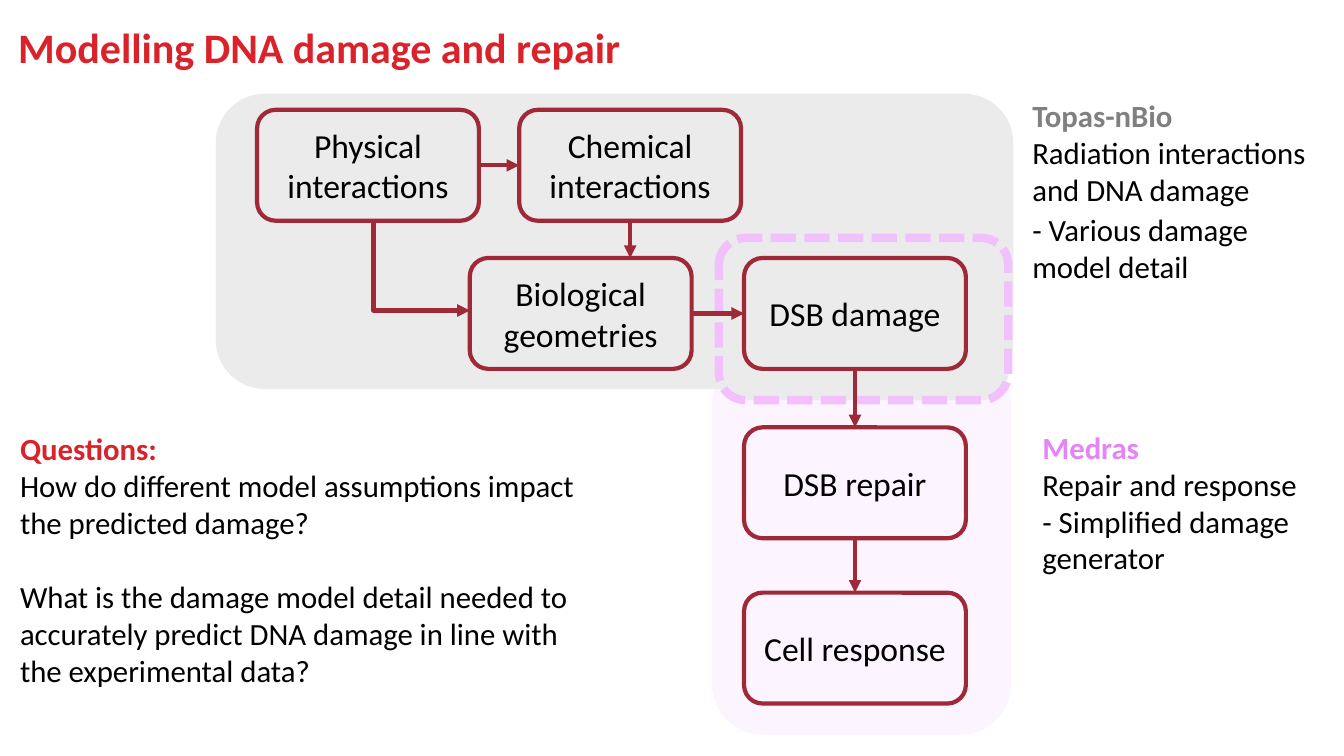
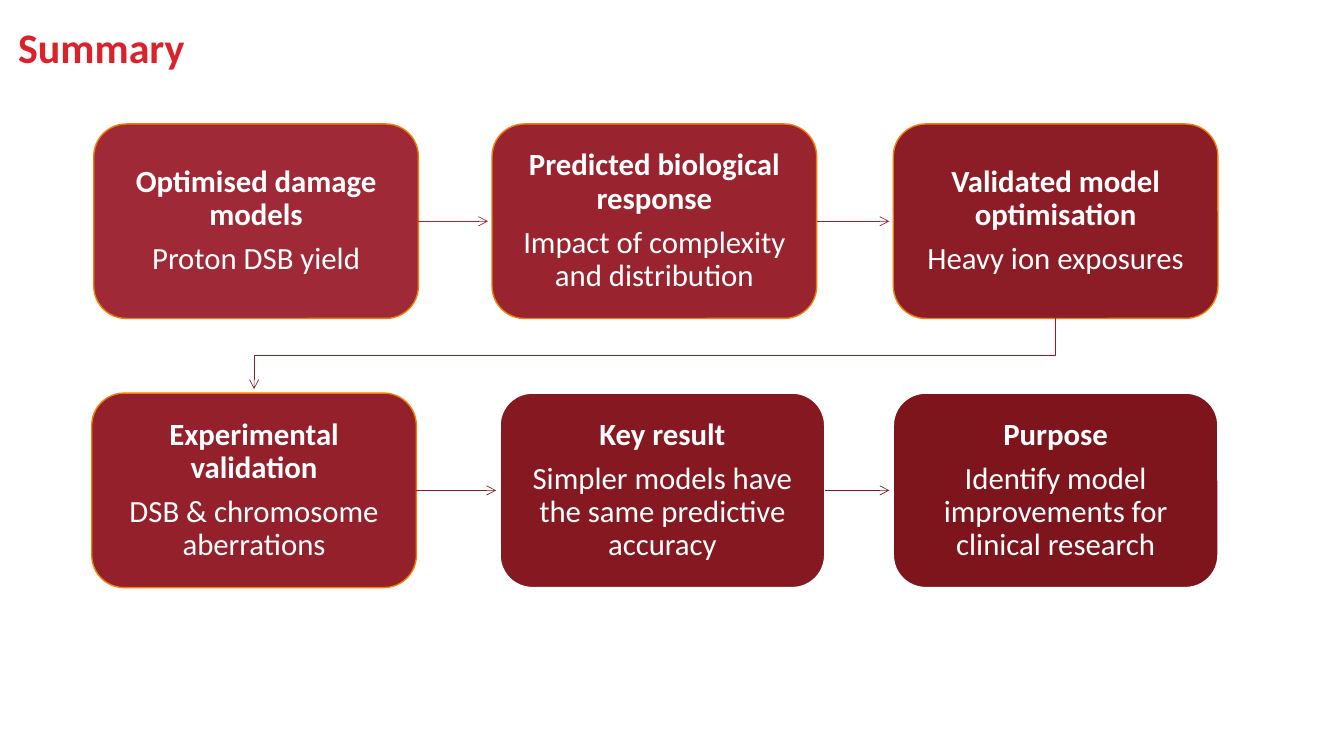
from pptx import Presentation
from pptx.dml.color import RGBColor
from pptx.enum.dml import MSO_LINE
from pptx.enum.shapes import MSO_CONNECTOR, MSO_SHAPE
from pptx.enum.text import MSO_ANCHOR, MSO_AUTO_SIZE, PP_ALIGN
from pptx.oxml.ns import qn
from pptx.util import Inches, Pt
from lxml import etree

STRAIGHT, ELBOW = MSO_CONNECTOR.STRAIGHT, MSO_CONNECTOR.ELBOW
ROUND_RECT = MSO_SHAPE.ROUNDED_RECTANGLE
SYS_DASH = MSO_LINE.SQUARE_DOT
TOP_ANCHOR, MIDDLE = MSO_ANCHOR.TOP, MSO_ANCHOR.MIDDLE
NO_AUTOFIT = MSO_AUTO_SIZE.NONE
LEFT_ALIGN, CENTER = PP_ALIGN.LEFT, PP_ALIGN.CENTER
TOP, LEFT, BOTTOM, RIGHT = range(4)  # connection sites of a rectangle

FONT = "Calibri"
RED = RGBColor(0xD9, 0x22, 0x2A)
MAROON = RGBColor(0x9F, 0x29, 0x36)
ORANGE = RGBColor(0xF0, 0x7F, 0x09)
WHITE = RGBColor(0xFF, 0xFF, 0xFF)
BLACK = RGBColor(0, 0, 0)
GREY = RGBColor(0x80, 0x80, 0x80)
PALE_GREY = RGBColor(0xEB, 0xEB, 0xEB)
PINK = RGBColor(0xE5, 0x83, 0xF9)
LIGHT_PINK = RGBColor(0xF2, 0xC0, 0xFC)
PALE_PINK = RGBColor(0xFC, 0xF4, 0xFE)

# Slide 1: (left, top, width, height), fill, line, line width, dash
PANELS = [
    ((7.07, 3.5, 2.95, 3.78), PALE_PINK, PALE_PINK, 1, None),
    ((2.14, 0.93, 7.91, 2.93), PALE_GREY, None, 0, None),
    ((7.13, 2.36, 2.87, 1.61), PALE_GREY, LIGHT_PINK, 6, SYS_DASH),
]
STEP_SIZE = (2.2, 1.1)
STEPS = {
    "Physical interactions": (2.55, 1.09),
    "Chemical interactions": (5.15, 1.09),
    "Biological geometries": (4.66, 2.56),
    "DSB damage": (7.38, 2.56),
    "DSB repair": (7.38, 4.24),
    "Cell response": (7.38, 5.88),
}
STEP_LINKS = [
    ("Physical interactions", RIGHT, "Chemical interactions", LEFT),
    ("Biological geometries", RIGHT, "DSB damage", LEFT),
    ("DSB damage", BOTTOM, "DSB repair", TOP),
    ("DSB repair", BOTTOM, "Cell response", TOP),
]
# (left, top, width, height), heading, colour, [(text, points before)]
NOTES = [
    ((10.14, 0.91, 3.19, 1.97), "Topas-nBio", GREY,
     [("Radiation interactions and DNA damage", 0),
      ("- Various damage model detail", 2)]),
    ((10.24, 4.2, 2.99, 1.59), "Medras", PINK,
     [("Repair and response", 0), ("- Simplified damage generator", 0)]),
    ((0.1, 4.21, 5.92, 2.69), "Questions:", RED,
     [("How do different model assumptions impact the predicted damage?", 0),
      ("What is the damage model detail needed to accurately predict DNA "
       "damage in line with the experimental data?", 26.8)]),
]

# Slide 2: left, top, fill, line, heading, text; in reading order
CARD_SIZE = (3.22, 1.93)
CARDS = [
    (0.93, 1.23, MAROON, ORANGE, "Optimised damage models",
     "Proton DSB yield"),
    (4.88, 1.23, RGBColor(0x99, 0x24, 0x30), ORANGE,
     "Predicted biological response", "Impact of complexity and distribution"),
    (8.86, 1.23, RGBColor(0x8C, 0x1C, 0x26), ORANGE,
     "Validated model optimisation", "Heavy ion exposures"),
    (0.91, 3.9, RGBColor(0x93, 0x20, 0x2B), ORANGE,
     "Experimental validation", "DSB & chromosome aberrations"),
    (4.96, 3.9, RGBColor(0x86, 0x18, 0x21), WHITE,
     "Key result", "Simpler models have the same predictive accuracy"),
    (8.86, 3.9, RGBColor(0x7E, 0x15, 0x1D), WHITE,
     "Purpose", "Identify model improvements for clinical research"),
]
CARD_LINK_COLOURS = [MAROON, RGBColor(0x98, 0x23, 0x2F),
                     RGBColor(0x90, 0x1E, 0x29), RGBColor(0x87, 0x19, 0x23),
                     RGBColor(0x7E, 0x15, 0x1D)]
ARROW_GAP = Inches(0.04)


def add_titled_slide(prs, title):
    s = prs.slides.add_slide(prs.slide_layouts[5])
    sp = s.shapes.title
    sp.left, sp.top, sp.width, sp.height = map(Inches, (0.08, 0.19, 12, 0.58))
    tf = sp.text_frame
    tf.auto_size = NO_AUTOFIT
    tf.vertical_anchor = TOP_ANCHOR
    p = tf.paragraphs[0]
    p.alignment = LEFT_ALIGN
    p.line_spacing = Pt(33.8)
    add_run(p, title, 30, RED, True)
    return s


def add_run(p, text, size, colour, bold=False):
    r = p.add_run()
    r.text = text
    r.font.name, r.font.size, r.font.bold = FONT, Pt(size), bold
    r.font.color.rgb = colour


def add_round_rect(s, box, fill, line, width, dash=None):
    sp = s.shapes.add_shape(ROUND_RECT, *map(Inches, box))
    sp.shadow.inherit = False
    if fill is None:
        sp.fill.background()
    else:
        sp.fill.solid()
        sp.fill.fore_color.rgb = fill
    if line is None:
        sp.line.fill.background()
    else:
        sp.line.color.rgb = line
        sp.line.width = Pt(width)
        if dash is not None:
            sp.line.dash_style = dash
    sp.text_frame.word_wrap = True
    sp.text_frame.vertical_anchor = MIDDLE
    return sp


def style_arrow(sp, colour, width, head):
    sp.line.color.rgb = colour
    sp.line.width = Pt(width)
    ln = sp.line._get_or_add_ln()
    etree.SubElement(ln, qn("a:tailEnd"), type=head)


def add_arrow(s, start, end, colour, width, head, kind=STRAIGHT):
    """Draw an arrow; each end is an (x, y) point or a (shape, site) joint."""
    cxn = s.shapes.add_connector(kind, 0, 0, 0, 0)
    if isinstance(start[0], int):
        cxn.begin_x, cxn.begin_y = start
    else:
        cxn.begin_connect(*start)
    if isinstance(end[0], int):
        cxn.end_x, cxn.end_y = end
    else:
        cxn.end_connect(*end)
    style_arrow(cxn, colour, width, head)
    etree.SubElement(cxn._element.spPr, qn("a:effectLst"))


def add_note(s, box, heading, colour, lines):
    tf = s.shapes.add_textbox(*map(Inches, box)).text_frame
    tf.word_wrap = True
    add_run(tf.paragraphs[0], heading, 22, colour, True)
    for text, before in lines:
        p = tf.add_paragraph()
        if before:
            p.space_before = Pt(before)
        add_run(p, text, 22, BLACK)


def add_card(s, left, top, fill, line, heading, text):
    sp = add_round_rect(s, (left, top, *CARD_SIZE), fill, line, 1)
    tf = sp.text_frame
    tf.margin_left = tf.margin_right = Inches(0.16)
    tf.margin_top = tf.margin_bottom = Inches(0.17)
    for p, words, bold in ((tf.paragraphs[0], heading, True),
                           (tf.add_paragraph(), text, False)):
        p.alignment = CENTER
        p.line_spacing = 0.9
        p.space_after = Pt(7.7)
        add_run(p, words, 22, WHITE, bold)
    return sp


def add_row_return(s, last, first, colour):
    """Lead from the end of one row of cards to the start of the next."""
    x1, y1 = last.left + last.width // 2, last.top + last.height
    x2, y2 = first.left + first.width // 2, first.top - ARROW_GAP
    y_mid = (y1 + first.top) // 2
    builder = s.shapes.build_freeform(x1, y1)
    builder.add_line_segments([(x1, y_mid), (x2, y_mid), (x2, y2)], close=False)
    sp = builder.convert_to_shape()
    sp.shadow.inherit = False
    sp.fill.background()
    style_arrow(sp, colour, 0.5, "arrow")


def build_modelling_slide(prs):
    s = add_titled_slide(prs, "Modelling DNA damage and repair")
    for panel in PANELS:
        add_round_rect(s, *panel)
    steps = {}
    for label, place in STEPS.items():
        sp = add_round_rect(s, (*place, *STEP_SIZE), None, MAROON, 3)
        p = sp.text_frame.paragraphs[0]
        p.alignment = CENTER
        add_run(p, label, 24, BLACK)
        steps[label] = sp
    for a, a_site, b, b_site in STEP_LINKS:
        add_arrow(s, (steps[a], a_site), (steps[b], b_site),
                  MAROON, 3, "triangle")
    chemical = steps["Chemical interactions"]
    geometries = steps["Biological geometries"]
    add_arrow(s, (chemical, BOTTOM),
              (chemical.left + chemical.width // 2, geometries.top),
              MAROON, 3, "triangle")
    add_arrow(s, (Inches(2.75), Inches(2.19)),
              (geometries.left, Inches(3.08)), MAROON, 3, "triangle", ELBOW)
    for note in NOTES:
        add_note(s, *note)


def build_summary_slide(prs):
    s = add_titled_slide(prs, "Summary")
    cards = [add_card(s, *card) for card in CARDS]
    for a, b, colour in zip(cards, cards[1:], CARD_LINK_COLOURS):
        if b.left < a.left:
            add_row_return(s, a, b, colour)
        else:
            end = (b.left - ARROW_GAP, a.top + a.height // 2)
            add_arrow(s, (a, RIGHT), end, colour, 0.5, "arrow")


def main():
    prs = Presentation()
    prs.slide_width, prs.slide_height = Inches(13.33), Inches(7.5)
    build_modelling_slide(prs)
    build_summary_slide(prs)
    prs.save("out.pptx")


if __name__ == "__main__":
    main()
